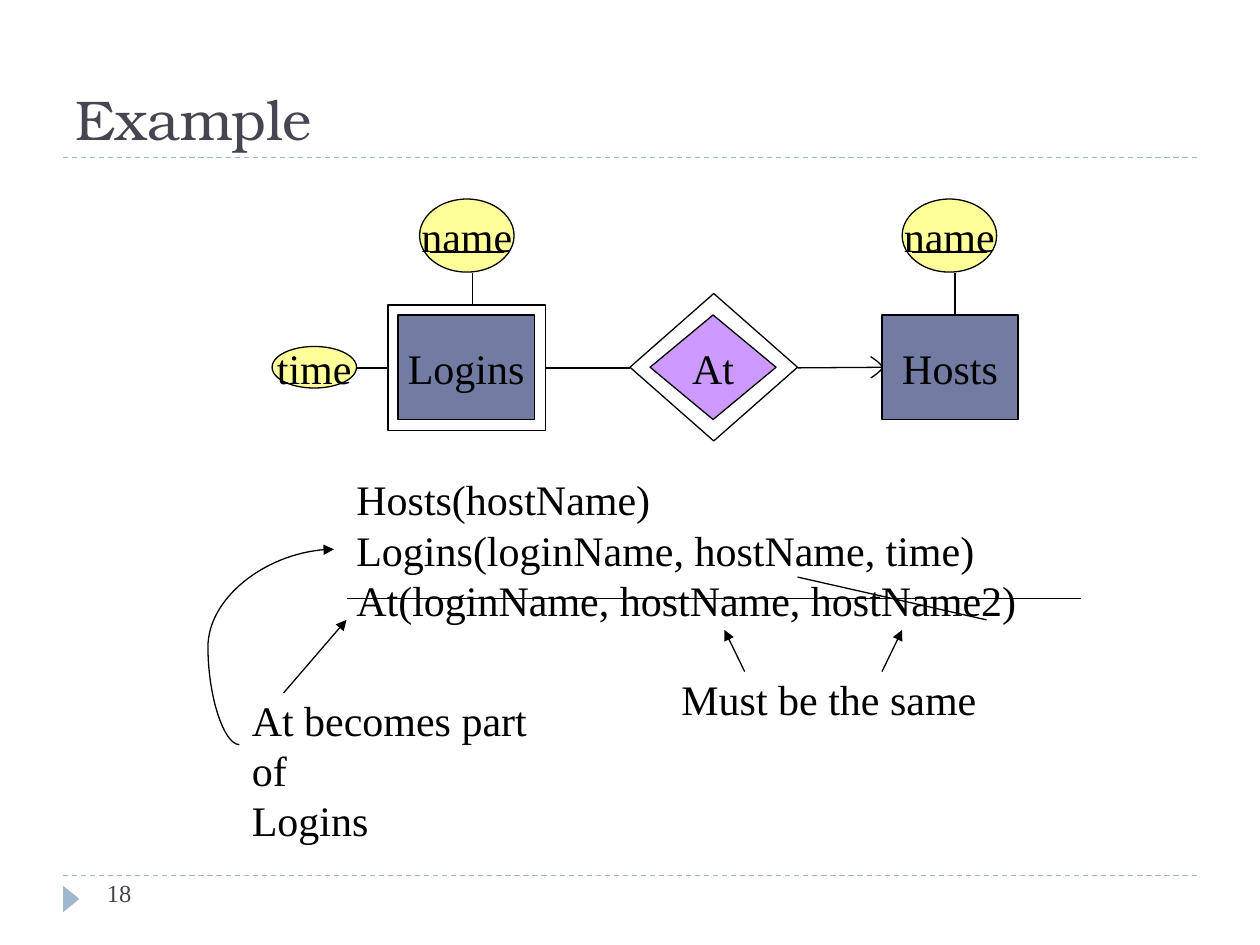
from typing import NamedTuple, Optional

from pptx import Presentation, util as u
from pptx.dml.color import RGBColor
from pptx.enum import dml, shapes, text
from pptx.oxml.ns import qn
from lxml import etree

PX = 9144
SERIF, TITLE = "Times New Roman", "TeX Gyre Bonum"
HEX = {"ink": "000000", "slate": "464653", "rule": "9FB8CD",
       "blue": "727CA3", "violet": "CC99FF", "yellow": "FFFF99"}
KIND = shapes.MSO_SHAPE
LINK = shapes.MSO_CONNECTOR


class Node(NamedTuple):
    kind: int
    box: tuple[int, int, int, int]
    fill: Optional[str] = None
    label: str = ""
    edge: Optional[str] = "ink"
    turn: int = 0


class Wire(NamedTuple):
    start: tuple[int, int]
    end: tuple[int, int]
    arrow: bool = False
    hue: str = "ink"
    dash: bool = False
    kind: int = LINK.STRAIGHT
    bend: Optional[int] = None


def color(name: str) -> RGBColor:
    return RGBColor.from_string(HEX[name])


def emu(*nums: float) -> list[int]:
    return [round(n * PX) for n in nums]


def write(frame, words: str, size=24, font=SERIF, hue="ink", wrap=False, pitch=28.8,
          align=text.PP_ALIGN.LEFT, anchor=text.MSO_ANCHOR.TOP) -> None:
    frame.word_wrap = wrap
    frame.vertical_anchor = anchor
    for i, line in enumerate(words.split("\n")):
        para = frame.add_paragraph() if i else frame.paragraphs[0]
        para.alignment = align
        if pitch:
            para.line_spacing = u.Pt(pitch)
        run = para.add_run()
        run.text = line
        run.font.size, run.font.name = u.Pt(size), font
        run.font.color.rgb = color(hue)


def note(slide, box: tuple[int, int, int, int], words: str, **form) -> None:
    write(slide.shapes.add_textbox(*emu(*box)).text_frame, words, **form)


def style(shape, fill: Optional[str], edge: Optional[str]) -> None:
    shape.shadow.inherit = False
    if fill:
        shape.fill.solid()
        shape.fill.fore_color.rgb = color(fill)
    else:
        shape.fill.background()
    if edge:
        shape.line.color.rgb = color(edge)
        shape.line.width = u.Pt(0.75)
    else:
        shape.line.fill.background()


def draw(slide, node: Node):
    shape = slide.shapes.add_shape(node.kind, *emu(*node.box))
    style(shape, node.fill, node.edge)
    shape.rotation = node.turn
    if node.label:
        write(shape.text_frame, node.label, align=text.PP_ALIGN.CENTER,
              anchor=text.MSO_ANCHOR.MIDDLE)
    return shape


def link(slide, wire: Wire):
    line = slide.shapes.add_connector(wire.kind, *emu(*wire.start, *wire.end))
    line.line.color.rgb = color(wire.hue)
    line.line.width = u.Pt(0.75)
    if wire.dash:
        line.line.dash_style = dml.MSO_LINE.DASH
    props = line._element.spPr
    if wire.arrow:
        etree.SubElement(props.find(qn("a:ln")), qn("a:tailEnd"), type="triangle")
    if wire.bend is not None:
        etree.SubElement(props.find(qn("a:prstGeom")).find(qn("a:avLst")),
                         qn("a:gd"), name="adj1", fmla=f"val {wire.bend}")
    etree.SubElement(props, qn("a:effectLst"))
    return line


def curve(slide, start: tuple, *parts: tuple, steps: int = 8) -> None:
    pts, here = [], start
    for one, two, end in parts:
        for i in range(1, steps + 1):
            t = i / steps
            s = 1 - t
            pts.append(tuple(emu(*(s**3 * a + 3 * s * s * t * b + 3 * s * t * t * c + t**3 * d
                                   for a, b, c, d in zip(here, one, two, end)))))
        here = end
    pen = slide.shapes.build_freeform(*emu(*start), scale=1.0)
    pen.add_line_segments(pts, close=False)
    style(pen.convert_to_shape(), None, "ink")


def main() -> None:
    deck = Presentation()
    deck.slide_width, deck.slide_height = emu(1000, 750)
    slide = deck.slides.add_slide(deck.slide_layouts[6])

    for y in (695, 125):
        link(slide, Wire((50, y), (950, y), hue="rule", dash=True))
    draw(slide, Node(KIND.ISOSCELES_TRIANGLE, (46, 707, 21, 13), "rule", edge=None, turn=90))
    note(slide, (50, 25, 900, 100), "Example", size=32, font=TITLE, hue="slate",
         wrap=True, pitch=None, anchor=text.MSO_ANCHOR.BOTTOM)
    note(slide, (75, 692, 217, 40), "18", size=14, hue="slate", wrap=True, pitch=None)

    draw(slide, Node(KIND.RECTANGLE, (316, 250, 108, 83), "blue", "Logins"))
    hosts = draw(slide, Node(KIND.RECTANGLE, (700, 250, 108, 83), "blue", "Hosts"))
    draw(slide, Node(KIND.DIAMOND, (516, 250, 100, 83), "violet", "At"))
    for x in (333, 716):
        draw(slide, Node(KIND.OVAL, (x, 158, 75, 58), "yellow", "name"))
        link(slide, Wire((x + 8, 200), (x + 67, 200)))
    draw(slide, Node(KIND.OVAL, (216, 275, 67, 33), "yellow", "time"))
    frame = draw(slide, Node(KIND.RECTANGLE, (308, 242, 125, 100)))
    draw(slide, Node(KIND.DIAMOND, (500, 233, 133, 117)))

    link(slide, Wire((375, 217), (375, 242)))
    link(slide, Wire((758, 217), (758, 250)))
    link(slide, Wire((500, 292), (433, 292))).end_connect(frame, 3)
    link(slide, Wire((633, 292), (700, 292))).end_connect(hosts, 1)
    link(slide, Wire((283, 292), (308, 292))).end_connect(frame, 1)
    curve(slide, (691, 283), ((695, 286), (700, 289), (700, 292)),
          ((700, 294), (693, 299), (691, 300)))

    note(slide, (273, 371, 544, 130),
         "Hosts(hostName)\nLogins(loginName, hostName, time)\n"
         "At(loginName, hostName, hostName2)")
    note(slide, (531, 530, 254, 50), "Must be the same")
    note(slide, (190, 546, 274, 90), "At becomes part of\nLogins")
    for wire in (Wire((591, 533), (575, 500), True),
                 Wire((700, 533), (716, 500), True),
                 Wire((225, 550), (275, 492), True),
                 Wire((190, 591), (265, 436), True, kind=LINK.CURVE, bend=-33300),
                 Wire((633, 458), (783, 492)),
                 Wire((275, 475), (858, 475))):
        link(slide, wire)
    deck.save("out.pptx")


if __name__ == "__main__":
    main()
